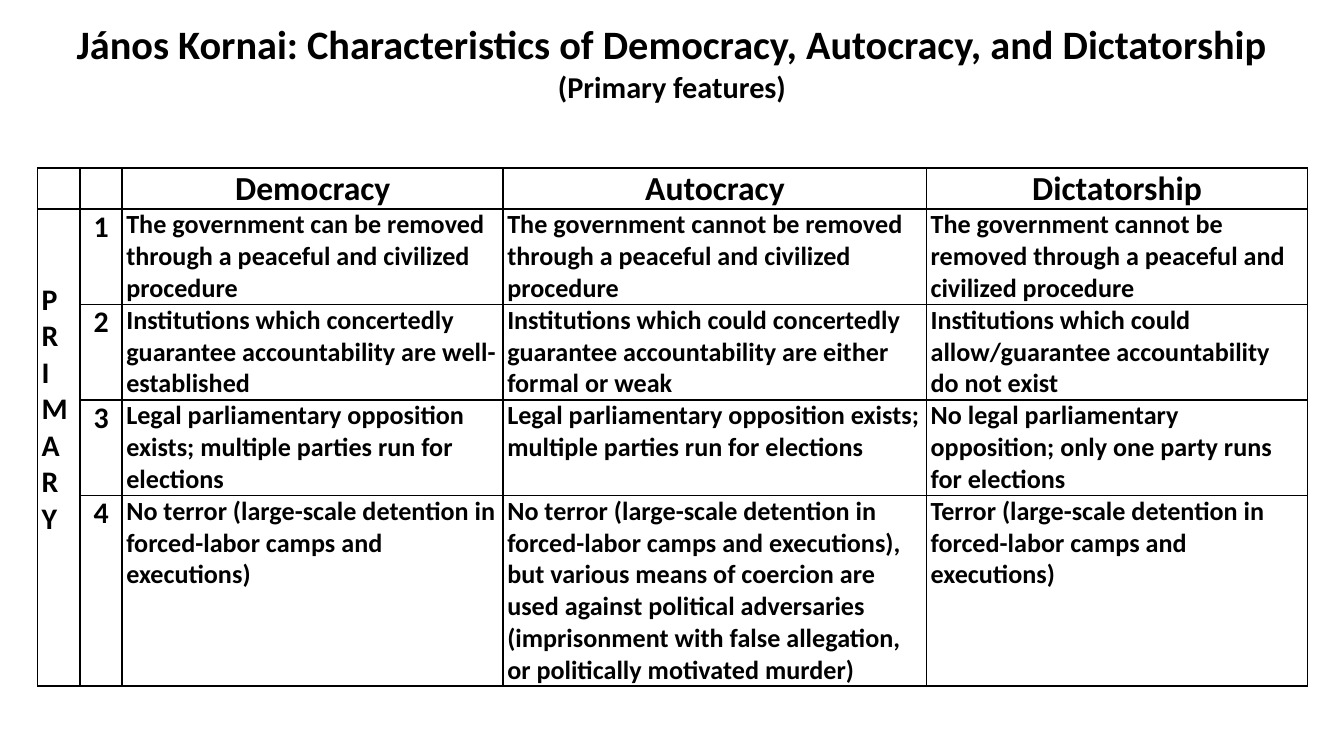
from lxml import etree
from pptx import Presentation
from pptx.dml.color import RGBColor
from pptx.enum.text import MSO_ANCHOR, MSO_AUTO_SIZE, PP_ALIGN
from pptx.oxml.ns import qn
from pptx.util import Inches, Pt

BLACK, WHITE = "000000", "FFFFFF"
SLIDE_WIDTH = 10
SLIDE_HEIGHT = SLIDE_WIDTH * 9 / 16
TABLE_WIDTH = 9.45
COL_SHARES = [1, 1, 9, 10, 9]
ROW_HEIGHTS = [0.3, 0.71, 0.71, 0.71, 1.42]
SYSTEMS = ["Democracy", "Autocracy", "Dictatorship"]
FEATURES = [
    ["The government can be removed through a peaceful and civilized procedure",
     "The government cannot be removed through a peaceful and civilized procedure",
     "The government cannot be removed through a peaceful and civilized procedure"],
    ["Institutions which concertedly guarantee accountability are well-established",
     "Institutions which could concertedly guarantee accountability are either "
     "formal or weak",
     "Institutions which could allow/guarantee accountability do not exist"],
    ["Legal parliamentary opposition exists; multiple parties run for elections",
     "Legal parliamentary opposition exists; multiple parties run for elections",
     "No legal parliamentary opposition; only one party runs for elections"],
    ["No terror (large-scale detention in forced-labor camps and executions)",
     "No terror (large-scale detention in forced-labor camps and executions), "
     "but various means of coercion are used against political adversaries "
     "(imprisonment with false allegation, or politically motivated murder)",
     "Terror (large-scale detention in forced-labor camps and executions)"],
]


def color(value):
    return RGBColor.from_string(value)


def add_run(p, text, size):
    r = p.add_run()
    r.text = text
    r.font.name = "Calibri"
    r.font.size = Pt(size)
    r.font.bold = True
    r.font.color.rgb = color(BLACK)


def add_title(slide):
    title = slide.shapes.title
    title.left, title.top = Inches(0), Inches(0)
    title.width, title.height = Inches(SLIDE_WIDTH), Inches(0.92)
    tf = title.text_frame
    tf.word_wrap = True
    tf.auto_size = MSO_AUTO_SIZE.NONE
    tf.vertical_anchor = MSO_ANCHOR.MIDDLE
    p = tf.paragraphs[0]
    p.alignment = PP_ALIGN.CENTER
    add_run(p, "János Kornai: Characteristics of Democracy, Autocracy, "
               "and Dictatorship", 21.6)
    p.add_line_break()
    add_run(p, "(Primary features)", 16.2)


def format_cell(cell):
    """Set narrow insets, a white fill and a thin black border on all sides."""
    cell.margin_left = cell.margin_right = Inches(0.03)
    cell.margin_top = cell.margin_bottom = Inches(0)
    cell.fill.solid()
    cell.fill.fore_color.rgb = color(WHITE)
    props = cell._tc.get_or_add_tcPr()
    for i, side in enumerate(["a:lnL", "a:lnR", "a:lnT", "a:lnB"]):
        line = etree.Element(qn(side), w=str(Pt(1)))
        fill = etree.SubElement(line, qn("a:solidFill"))
        etree.SubElement(fill, qn("a:srgbClr"), val=BLACK)
        props.insert(i, line)


def write_cell(cell, lines, size, align=PP_ALIGN.LEFT):
    tf = cell.text_frame
    for i, line in enumerate(lines):
        p = tf.add_paragraph() if i else tf.paragraphs[0]
        p.alignment = align
        add_run(p, line, size)


def add_feature_table(slide):
    frame = slide.shapes.add_table(
        len(ROW_HEIGHTS), len(COL_SHARES), Inches(0.28), Inches(1.25),
        Inches(TABLE_WIDTH), Inches(sum(ROW_HEIGHTS)))
    table = frame.table
    table.first_row = table.horz_banding = False
    for column, share in zip(table.columns, COL_SHARES):
        column.width = Inches(TABLE_WIDTH * share / sum(COL_SHARES))
    for row, height in zip(table.rows, ROW_HEIGHTS):
        row.height = Inches(height)
    for cell in table.iter_cells():
        format_cell(cell)

    for col, system in enumerate(SYSTEMS, start=2):
        write_cell(table.cell(0, col), [system], 18, PP_ALIGN.CENTER)
    for row, texts in enumerate(FEATURES, start=1):
        write_cell(table.cell(row, 1), [str(row)], 16, PP_ALIGN.CENTER)
        for col, text in enumerate(texts, start=2):
            write_cell(table.cell(row, col), [text], 14)

    group = table.cell(1, 0)
    group.merge(table.cell(len(FEATURES), 0))
    group.margin_top = Inches(0.54)
    write_cell(group, "PRIMARY", 16)


def main():
    prs = Presentation()
    prs.slide_width, prs.slide_height = Inches(SLIDE_WIDTH), Inches(SLIDE_HEIGHT)
    slide = prs.slides.add_slide(prs.slide_layouts[5])
    add_title(slide)
    add_feature_table(slide)
    prs.save("out.pptx")


if __name__ == "__main__":
    main()
